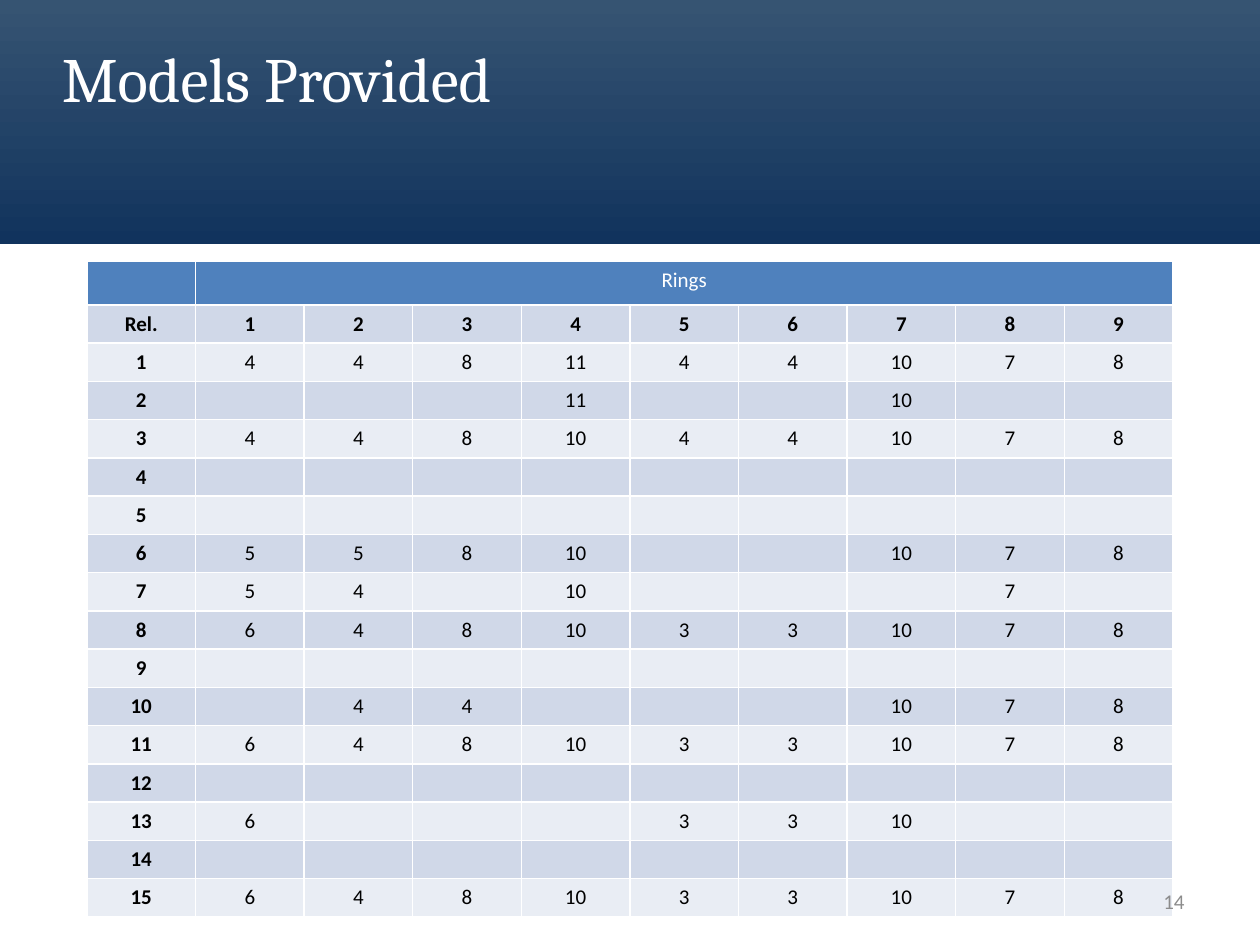
from lxml import etree
from pptx import Presentation
from pptx import util as u
from pptx.dml.color import RGBColor
from pptx.enum import shapes, text
from pptx.oxml import ns

WHITE = RGBColor(0xFF, 0xFF, 0xFF)
BLACK = RGBColor(0x00, 0x00, 0x00)
GRAY = RGBColor(0x8C, 0x8C, 0x8C)
BAND_BOTTOM = RGBColor(0x11, 0x33, 0x5D)
BAND_TOP = RGBColor(0x36, 0x54, 0x72)
HEADER_BLUE = RGBColor(0x4F, 0x81, 0xBD)
ROW_DARK = RGBColor(0xD0, 0xD8, 0xE8)
ROW_LIGHT = RGBColor(0xE9, 0xED, 0xF4)

RING_COUNT = 9
RELATION_COUNT = 15
HEADER_HEIGHT = u.Inches(0.35)
ROW_HEIGHT = u.Inches(0.29)
FULL_MODEL = [6, 4, 8, 10, 3, 3, 10, 7, 8]
MODELS = {
    1: [4, 4, 8, 11, 4, 4, 10, 7, 8],
    2: ["", "", "", 11, "", "", 10, "", ""],
    3: [4, 4, 8, 10, 4, 4, 10, 7, 8],
    6: [5, 5, 8, 10, "", "", 10, 7, 8],
    7: [5, 4, "", 10, "", "", "", 7, ""],
    8: FULL_MODEL,
    10: ["", 4, 4, "", "", "", 10, 7, 8],
    11: FULL_MODEL,
    13: [6, "", "", "", 3, 3, 10, "", ""],
    15: FULL_MODEL,
}


def write(frame, content, alignment, color, **formats):
    paragraph = frame.paragraphs[0]
    paragraph.alignment = alignment
    if content == "":
        size = str(int(formats["size"].pt * 100))
        etree.SubElement(paragraph._p, ns.qn("a:endParaRPr"), sz=size)
        return
    run = paragraph.add_run()
    run.text = str(content)
    run.font.color.rgb = color
    for name, value in formats.items():
        setattr(run.font, name, value)


presentation = Presentation()
presentation.slide_width = u.Inches(10)
presentation.slide_height = u.Inches(7.5)
width, height = presentation.slide_width, presentation.slide_height
slide = presentation.slides.add_slide(presentation.slide_layouts[5])

band = slide.shapes.add_shape(
    shapes.MSO_SHAPE.RECTANGLE, 0, 0, width, u.Inches(1.94))
band.shadow.inherit = False
band.line.fill.background()
band.fill.gradient()
band.fill.gradient_angle = 90
for stop, color, position in zip(
        band.fill.gradient_stops, (BAND_BOTTOM, BAND_TOP), (0, 1)):
    stop.color.rgb = color
    stop.position = position

rows = [["", "Rings"] + [""] * (RING_COUNT - 1),
        ["Rel.", *range(1, RING_COUNT + 1)]]
for relation in range(1, RELATION_COUNT + 1):
    rows.append([relation, *MODELS.get(relation, [""] * RING_COUNT)])

table_height = HEADER_HEIGHT + ROW_HEIGHT * (len(rows) - 1)
table_frame = slide.shapes.add_table(
    len(rows), RING_COUNT + 1, u.Inches(0.69), u.Inches(2.07),
    u.Inches(8.62), table_height)
table = table_frame.table
table.cell(0, 1).merge(table.cell(0, RING_COUNT))
for row_index, values in enumerate(rows):
    table.rows[row_index].height = ROW_HEIGHT if row_index else HEADER_HEIGHT
    row_fill = ROW_DARK if row_index % 2 else ROW_LIGHT
    for column_index, value in enumerate(values):
        cell = table.cell(row_index, column_index)
        cell.fill.solid()
        cell.fill.fore_color.rgb = row_fill if row_index else HEADER_BLUE
        write(cell.text_frame, value, text.PP_ALIGN.CENTER,
              BLACK if row_index else WHITE, name="Calibri", size=u.Pt(12),
              bold=row_index == 1 or (row_index > 1 and column_index == 0))

title = slide.shapes.title
title_format = {"left": u.Inches(0.39), "top": u.Inches(0.18),
                "width": u.Inches(9.35), "height": u.Inches(0.87)}
for name, value in title_format.items():
    setattr(title, name, value)
table_frame.element.addnext(title.element)
write(title.text_frame, "Models Provided", text.PP_ALIGN.LEFT, WHITE,
      name="Cambria", size=u.Pt(36))

number = slide.shapes.add_textbox(
    u.Inches(7.17), u.Inches(6.95), u.Inches(2.33), u.Inches(0.4))
write(number.text_frame, "14", text.PP_ALIGN.RIGHT, GRAY,
      name="Calibri", size=u.Pt(12))

for shape in (title, number):
    shape.text_frame.word_wrap = True
    shape.text_frame.vertical_anchor = text.MSO_ANCHOR.MIDDLE

presentation.save("out.pptx")
